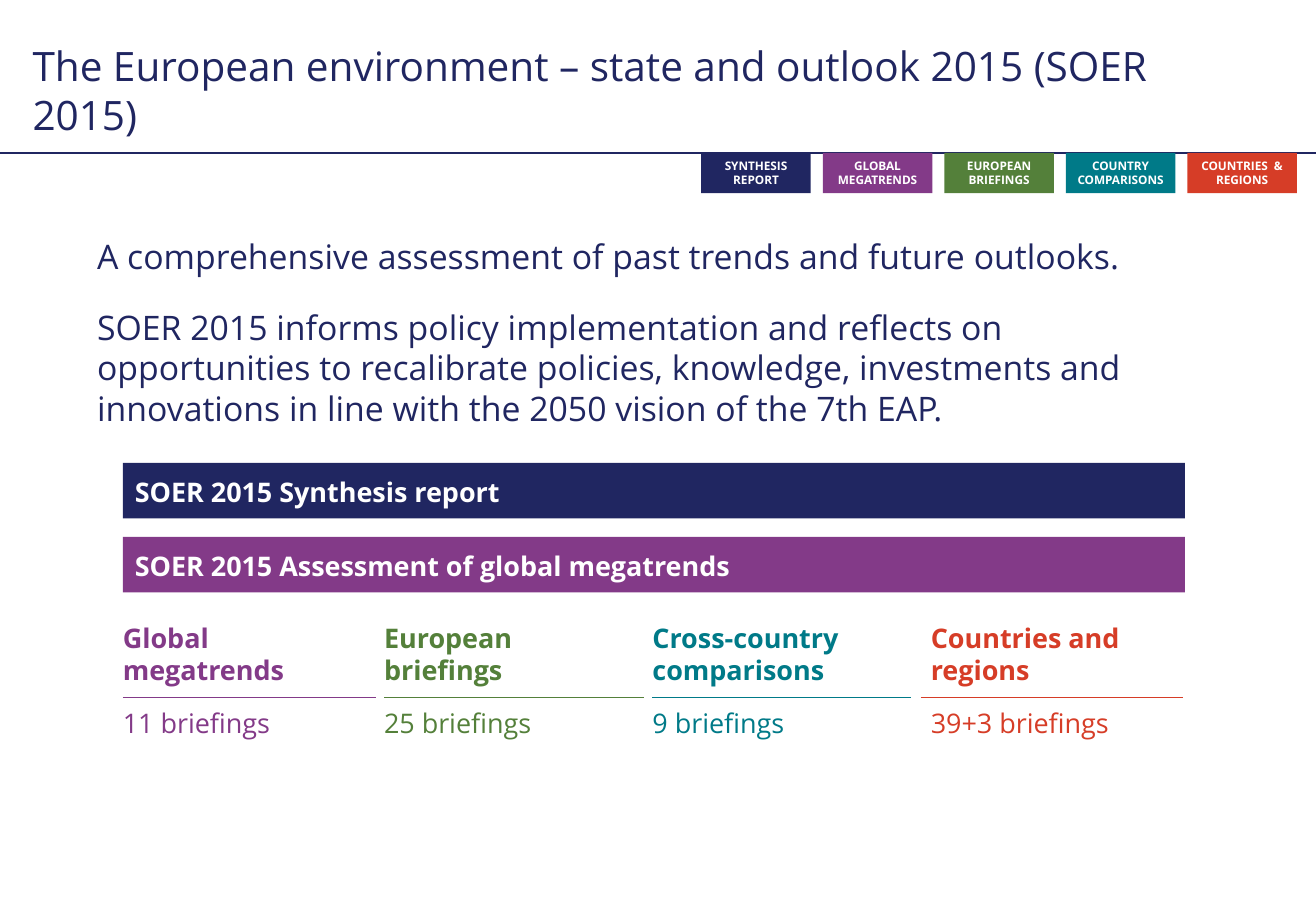
import dataclasses

import pptx
import pptx.dml.color
import pptx.enum.shapes
import pptx.enum.text
import pptx.oxml
import pptx.util

Cm = pptx.util.Cm
Pt = pptx.util.Pt
Color = pptx.dml.color.RGBColor
Anchor = pptx.enum.text.MSO_ANCHOR
Align = pptx.enum.text.PP_ALIGN


@dataclasses.dataclass(frozen=True)
class Theme:
    font: str = "Open Sans"
    navy: Color = Color(0x20, 0x26, 0x61)
    purple: Color = Color(0x83, 0x3A, 0x88)
    green: Color = Color(0x54, 0x80, 0x3A)
    teal: Color = Color(0x00, 0x7A, 0x88)
    red: Color = Color(0xD6, 0x3D, 0x27)
    white: Color = Color(0xFF, 0xFF, 0xFF)
    title_size: int = 24
    body_size: int = 20
    label_size: int = 16
    tab_size: int = 7


theme = Theme()


def write(shape, text, size, color, bold=False, align=Align.LEFT,
          anchor=Anchor.TOP, insets=(0.25, 0.13, 0.25, 0.13)):
    """Fill a shape with text; insets are left, top, right, bottom in cm."""
    frame = shape.text_frame
    frame.text = text
    frame.word_wrap = True
    frame.auto_size = pptx.enum.text.MSO_AUTO_SIZE.NONE
    frame.vertical_anchor = anchor
    frame.margin_left, frame.margin_top, frame.margin_right, frame.margin_bottom = map(Cm, insets)
    for paragraph in frame.paragraphs:
        paragraph.alignment = align
        for run in paragraph.runs:
            run.font.name = theme.font
            run.font.size = Pt(size)
            run.font.bold = bold
            run.font.color.rgb = color


def draw(left, top, width, height, color):
    """Draw a filled rectangle, or a horizontal rule when the height is zero."""
    if height:
        shape = slide.shapes.add_shape(pptx.enum.shapes.MSO_SHAPE.RECTANGLE,
                                       Cm(left), Cm(top), Cm(width), Cm(height))
        shape.shadow.inherit = False
        shape.fill.solid()
        shape.fill.fore_color.rgb = color
        shape.line.fill.background()
        return shape
    rule = slide.shapes.add_connector(pptx.enum.shapes.MSO_CONNECTOR.STRAIGHT,
                                      Cm(left), Cm(top), Cm(left + width), Cm(top))
    rule.line.color.rgb = color
    rule.line.width = Pt(0.75)
    rule._element.spPr.append(pptx.oxml.parse_xml(
        '<a:effectLst xmlns:a="http://schemas.openxmlformats.org/drawingml/2006/main"/>'))
    return rule


presentation = pptx.Presentation()
presentation.slide_width = Cm(27.51)
presentation.slide_height = Cm(19.05)
slide = presentation.slides.add_slide(presentation.slide_layouts.get_by_name("Title Only"))

# Title and header rule
title = slide.shapes.title
title.left, title.top, title.width, title.height = Cm(0.43), Cm(0.64), Cm(24.31), Cm(2.39)
write(title, "The European environment – state and outlook 2015 (SOER 2015)",
      theme.title_size, theme.navy, anchor=Anchor.BOTTOM)
draw(0, 3.2, 27.51, 0, theme.navy)

# Section tabs
tabs = [
    ("SYNTHESIS\nREPORT", theme.navy),
    ("GLOBAL\nMEGATRENDS", theme.purple),
    ("EUROPEAN\nBRIEFINGS", theme.green),
    ("COUNTRY COMPARISONS", theme.teal),
    ("COUNTRIES  & REGIONS", theme.red),
]
for index, (label, color) in enumerate(tabs):
    tab = draw(14.66 + 2.54 * index, 3.2, 2.29, 0.84, color)
    write(tab, label, theme.tab_size, theme.white, True, Align.CENTER, Anchor.MIDDLE, (0.1,) * 4)

# Introduction
introduction = slide.shapes.add_textbox(Cm(1.78), Cm(4.8), Cm(23.37), Cm(4.32))
write(introduction,
      "A comprehensive assessment of past trends and future outlooks.\n"
      "SOER 2015 informs policy implementation and reflects on opportunities to recalibrate "
      "policies, knowledge, investments and innovations in line with the 2050 vision of the 7th EAP.",
      theme.body_size, theme.navy)
introduction.text_frame.paragraphs[1].space_before = Pt(18)

# Report bars
reports = [
    ("SOER 2015 Synthesis report", theme.navy),
    ("SOER 2015 Assessment of global megatrends", theme.purple),
]
for index, (label, color) in enumerate(reports):
    bar = draw(2.57, 9.68 + 1.55 * index, 22.2, 1.16, color)
    write(bar, label, theme.label_size, theme.white, True,
          anchor=Anchor.MIDDLE, insets=(0.25, 0.05, 0.25, 0))

# Briefing columns: text left, text width, rule left, rule width
columns = [
    ("Global\nmegatrends", "11 briefings", theme.purple, 2.57, 4.24, 2.57, 5.28),
    ("European\nbriefings", "25 briefings", theme.green, 8.03, 4.24, 8.03, 5.43),
    ("Cross-country\ncomparisons", "9 briefings", theme.teal, 13.64, 5.21, 13.64, 5.41),
    ("Countries and regions", "39+3 briefings", theme.red, 19.46, 4.45, 19.25, 5.49),
]
for heading, count, color, left, width, rule_left, rule_width in columns:
    draw(rule_left, 14.58, rule_width, 0, color)
    for text, top, height, bold in [(heading, 13.0, 1.37, True), (count, 14.78, 0.69, False)]:
        box = slide.shapes.add_textbox(Cm(left), Cm(top), Cm(width), Cm(height))
        write(box, text, theme.label_size, color, bold, insets=(0, 0, 0.25, 0))

presentation.save("out.pptx")
